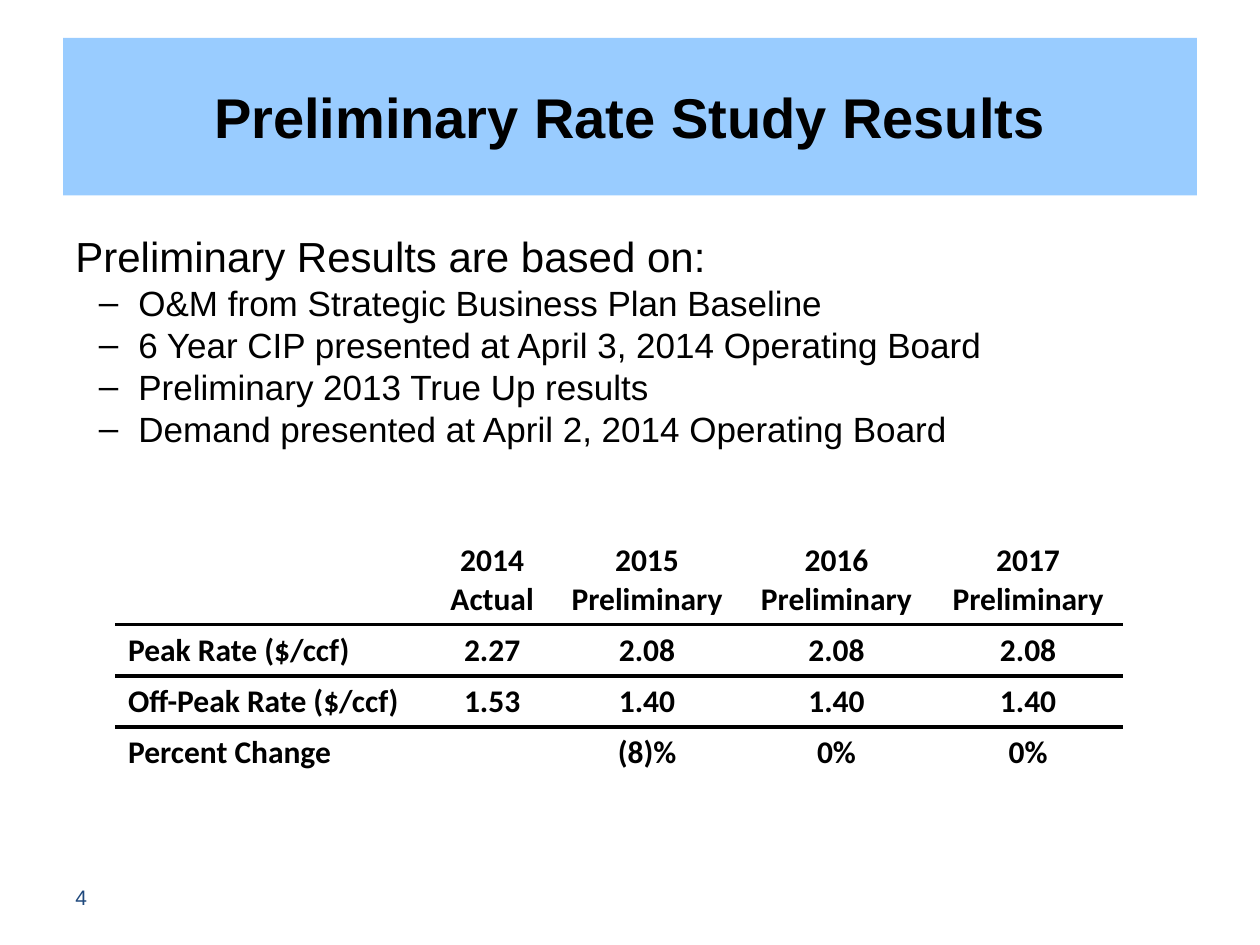
"""Build the preliminary rate study results slide."""
from lxml.etree import SubElement
from pptx import Presentation
from pptx.dml.color import RGBColor
from pptx.enum.text import MSO_ANCHOR as Anchor, PP_ALIGN as Align
from pptx.oxml.ns import qn
from pptx.util import Pt

TITLE = "Preliminary Rate Study Results"
LEAD = "Preliminary Results are based on:"
BASES = [
    "O&M from Strategic Business Plan Baseline",
    "6 Year CIP presented at April 3, 2014 Operating Board",
    "Preliminary 2013 True Up results",
    "Demand presented at April 2, 2014 Operating Board",
]
RATES = [
    ["", "2014\nActual", "2015 Preliminary", "2016 Preliminary", "2017 Preliminary"],
    ["Peak Rate ($/ccf)", "2.27", "2.08", "2.08", "2.08"],
    ["Off-Peak Rate ($/ccf)", "1.53", "1.40", "1.40", "1.40"],
    ["Percent Change", "", "(8)%", "0%", "0%"],
]
PAGE_NUMBER = "4"
COLUMN_WIDTHS = [180, 70.5, 106.5, 110, 109]
ROW_HEIGHTS = [51, 29.2, 29.2, 29.2]
RULED_ROWS = (0, 1)
NO_STYLE = "{2D5ABB26-0587-4C30-8999-92F81FD0307C}"
BLACK, NAVY, SKY = "000000", "1F497D", "99CCFF"


def paint(target, color):
    target.solid()
    target.fore_color.rgb = RGBColor.from_string(color)


def write(para, text, size, font="Arial", color=BLACK, bold=False):
    span = para.add_run()
    span.text = text
    span.font.name, span.font.size, span.font.bold = font, Pt(size), bold
    paint(span.font.fill, color)


def add_text_box(page, left, top, width, height):
    box = page.shapes.add_textbox(Pt(left), Pt(top), Pt(width), Pt(height))
    box.text_frame.word_wrap = True
    return box.text_frame


def add_dash(para):
    properties = para._p.get_or_add_pPr()
    properties.set("marL", str(Pt(36)))
    properties.set("indent", str(-Pt(22.5)))
    SubElement(properties, qn("a:buFont"), typeface="Arial")
    SubElement(properties, qn("a:buChar"), char="–")


def rule(cell, side):
    properties = cell._tc.get_or_add_tcPr()
    line = properties.makeelement(qn(f"a:{side}"), {"w": str(Pt(2.25))})
    fill = SubElement(line, qn("a:solidFill"))
    SubElement(fill, qn("a:srgbClr"), val=BLACK)
    properties.insert(0, line)


def add_title(page):
    title = page.shapes.title
    title.left, title.top, title.width, title.height = Pt(36), Pt(21.6), Pt(648), Pt(90)
    paint(title.fill, SKY)
    frame = title.text_frame
    frame.vertical_anchor = Anchor.MIDDLE
    frame.paragraphs[0].alignment = Align.CENTER
    write(frame.paragraphs[0], TITLE, 32, bold=True)


def add_body(page):
    frame = add_text_box(page, 36, 126, 648, 354)
    frame.margin_top = Pt(6)
    write(frame.paragraphs[0], LEAD, 24)
    for basis in BASES:
        para = frame.add_paragraph()
        para.level = 1
        add_dash(para)
        para.line_spacing = 0.8
        para.space_before = Pt(4.8)
        write(para, basis, 20)


def add_rates(page):
    frame = page.shapes.add_table(
        len(RATES), len(COLUMN_WIDTHS), Pt(66), Pt(306),
        Pt(sum(COLUMN_WIDTHS)), Pt(sum(ROW_HEIGHTS)))
    table = frame.table
    table.first_row = table.horz_banding = False
    next(frame.element.iter(qn("a:tableStyleId"))).text = NO_STYLE
    for column, width in zip(table.columns, COLUMN_WIDTHS):
        column.width = Pt(width)
    for r, (row, height) in enumerate(zip(RATES, ROW_HEIGHTS)):
        table.rows[r].height = Pt(height)
        for c, text in enumerate(row):
            cell = table.cell(r, c)
            cell.fill.background()
            if r in RULED_ROWS:
                rule(cell, "lnB")
            if r - 1 in RULED_ROWS:
                rule(cell, "lnT")
            for i, line in enumerate(text.split("\n") if text else []):
                para = cell.text_frame.add_paragraph() if i else cell.text_frame.paragraphs[0]
                para.alignment = Align.CENTER if c else Align.LEFT
                write(para, line, 18, "Calibri", bold=True)


def add_page_number(page):
    frame = add_text_box(page, 36, 498, 168, 28.8)
    frame.vertical_anchor = Anchor.MIDDLE
    write(frame.paragraphs[0], PAGE_NUMBER, 12, color=NAVY)


def main():
    deck = Presentation()
    deck.slide_width, deck.slide_height = Pt(720), Pt(540)
    page = deck.slides.add_slide(deck.slide_layouts[5])
    add_title(page)
    add_page_number(page)
    add_body(page)
    add_rates(page)
    deck.save("out.pptx")


if __name__ == "__main__":
    main()
